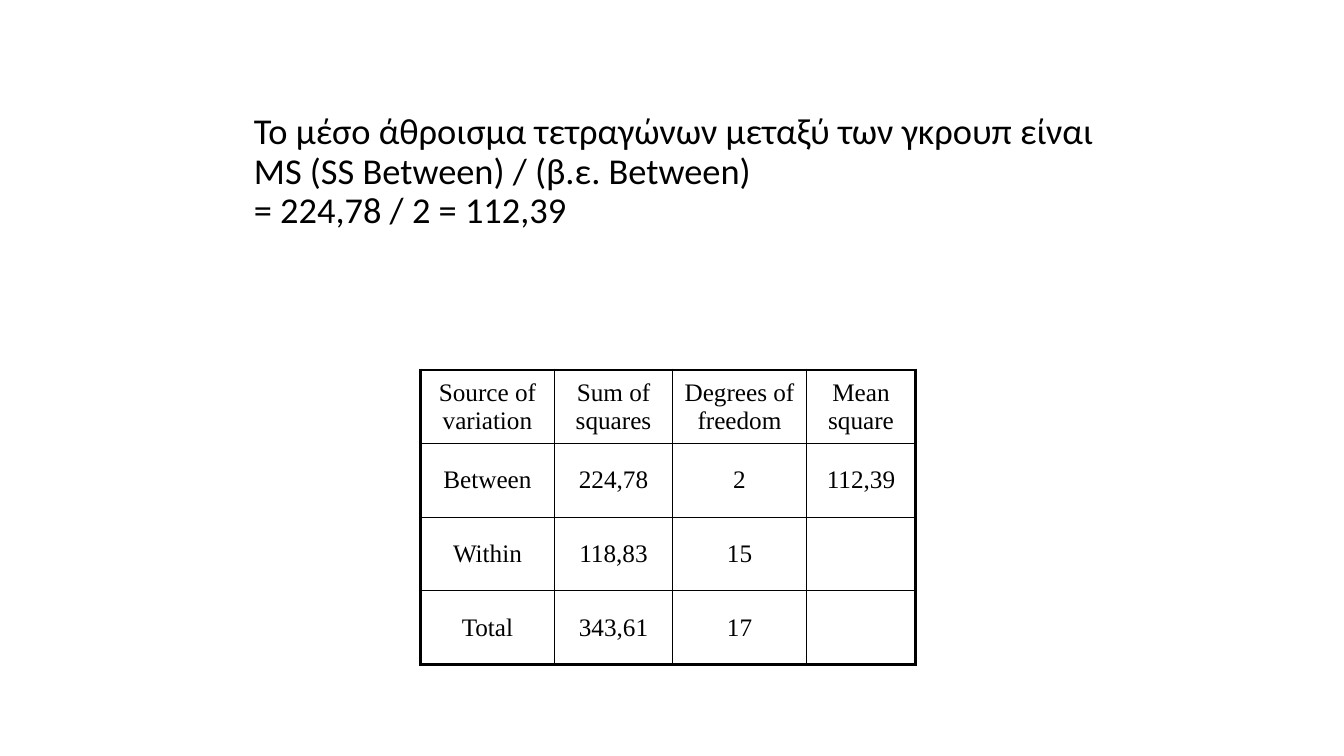
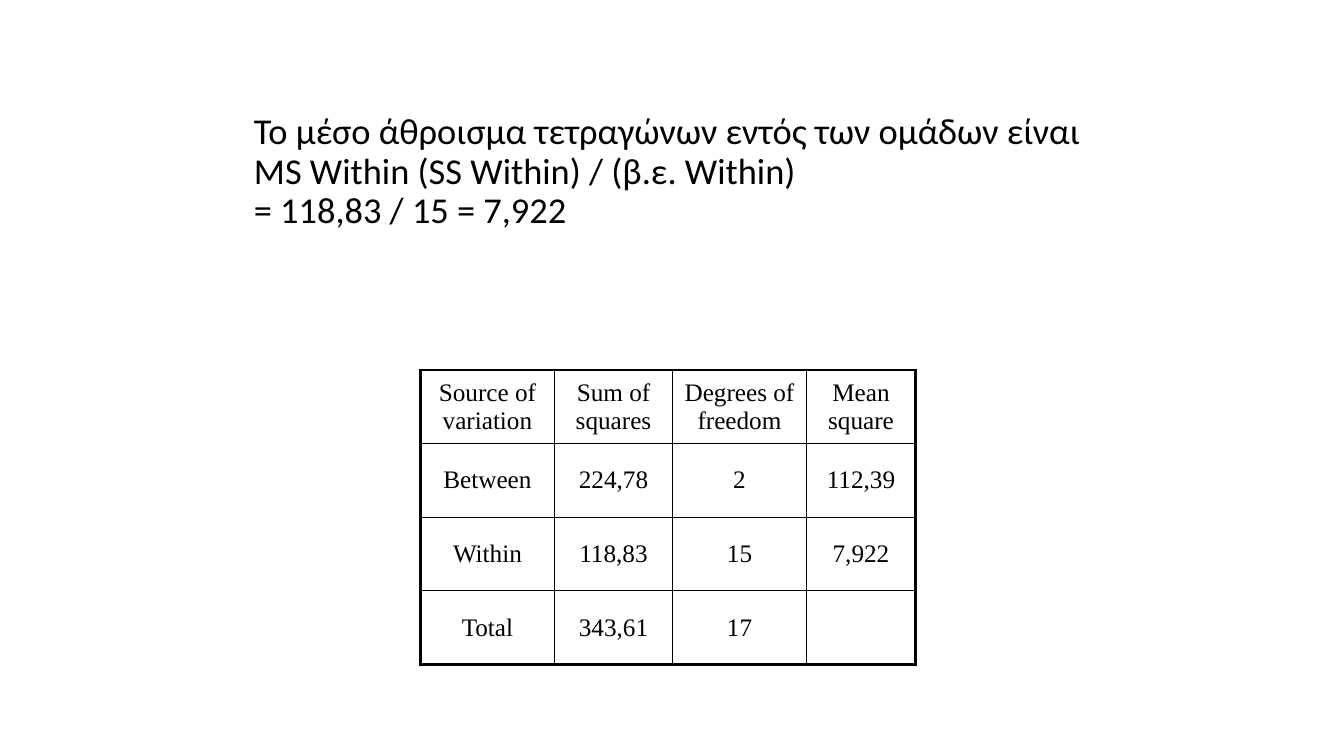
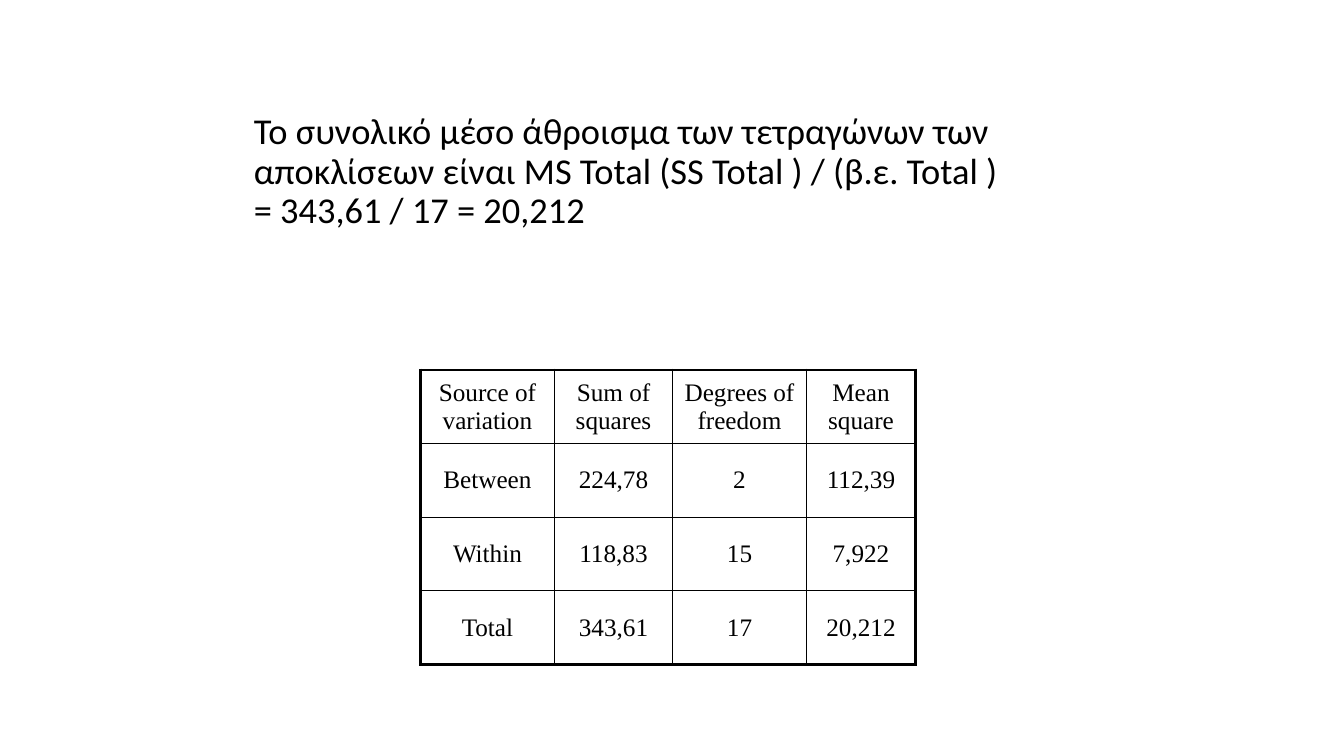
from lxml import etree
from pptx import Presentation
from pptx.dml.color import RGBColor
from pptx.enum.text import MSO_ANCHOR, PP_ALIGN
from pptx.oxml.ns import qn
from pptx.util import Inches, Pt

MIDDLE = MSO_ANCHOR.MIDDLE
LEFT, CENTER = PP_ALIGN.LEFT, PP_ALIGN.CENTER

COLORS = {"text": "000000", "border": "000000"}
TITLE_FONT, TABLE_FONT = "Calibri", "Times New Roman"
OUTER, INNER = 2.25, 1  # border widths in points

# Regions shared by all slides: left, top, width, height in inches
TITLE_BOX = (2.42, 0.92, 8.67, 1.58)
TABLE_BOX = (4.17, 3.67, 4.92, 2.92)
COL_WIDTHS = (1.33, 1.17, 1.33, 1.08)

HEADER = ("Source of variation", "Sum of squares", "Degrees of freedom", "Mean square")
SOURCES = (
    ("Between", "224,78", "2"),
    ("Within", "118,83", "15"),
    ("Total", "343,61", "17"),
)
MEAN_SQUARES = ("112,39", "7,922", "20,212")

# Each step shows one more mean square; \v is a line break
TITLES = (
    "Το μέσο άθροισμα τετραγώνων μεταξύ των γκρουπ είναι "
    "MS (SS Between) / (β.ε. Between)\v= 224,78 / 2 = 112,39",
    "Το μέσο άθροισμα τετραγώνων εντός των ομάδων είναι "
    "MS Within (SS Within) / (β.ε. Within)\v= 118,83 / 15 = 7,922",
    "Το συνολικό μέσο άθροισμα των τετραγώνων των αποκλίσεων είναι "
    "MS Total (SS Total ) / (β.ε. Total )\v= 343,61 / 17 = 20,212",
)


def write(tf, text, font, size, align=LEFT, spacing=1.0, color=COLORS["text"]):
    """Fill a text frame with one formatted paragraph."""
    tf.word_wrap = True
    p = tf.paragraphs[0]
    p.text = text
    p.alignment = align
    p.line_spacing = spacing
    for r in p.runs:
        r.font.name = font
        r.font.size = Pt(size)
        r.font.bold = False
        r.font.color.rgb = RGBColor.from_string(color)


def set_borders(cell, widths):
    """Draw the cell's borders; widths are for left, right, top, bottom."""
    tcPr = cell._tc.get_or_add_tcPr()
    for i, (side, width) in enumerate(zip("LRTB", widths)):
        ln = etree.Element(qn(f"a:ln{side}"), w=str(Pt(width)))
        fill = etree.SubElement(ln, qn("a:solidFill"))
        etree.SubElement(fill, qn("a:srgbClr"), val=COLORS["border"])
        tcPr.insert(i, ln)


def add_title(s, box, text):
    tf = s.shapes.add_textbox(*map(Inches, box)).text_frame
    tf.vertical_anchor = MIDDLE
    write(tf, text, TITLE_FONT, 26, spacing=0.9)


def add_variance_table(s, box, rows):
    n_rows, n_cols = len(rows), len(rows[0])
    frame = s.shapes.add_table(n_rows, n_cols, *map(Inches, box))
    table = frame.table
    table.first_row = table.horz_banding = False
    for col, width in zip(table.columns, COL_WIDTHS):
        col.width = Inches(width)
    for i, row in enumerate(rows):
        table.rows[i].height = Inches(box[3] / n_rows)
        for j, text in enumerate(row):
            cell = table.cell(i, j)
            cell.fill.background()
            cell.vertical_anchor = MIDDLE
            write(cell.text_frame, text, TABLE_FONT, 18, align=CENTER)
            on_edge = (j == 0, j == n_cols - 1, i == 0, i == n_rows - 1)
            set_borders(cell, [OUTER if edge else INNER for edge in on_edge])


def add_step_slide(prs, title, known):
    """Add a slide whose table shows the first `known` mean squares."""
    s = prs.slides.add_slide(prs.slide_layouts[6])
    add_title(s, TITLE_BOX, title)
    rows = [HEADER]
    for i, (source, mean) in enumerate(zip(SOURCES, MEAN_SQUARES)):
        rows.append((*source, mean if i < known else ""))
    add_variance_table(s, TABLE_BOX, rows)


def main():
    prs = Presentation()
    prs.slide_width, prs.slide_height = Inches(13.33), Inches(7.5)
    for known, title in enumerate(TITLES, start=1):
        add_step_slide(prs, title, known)
    prs.save("out.pptx")


if __name__ == "__main__":
    main()
